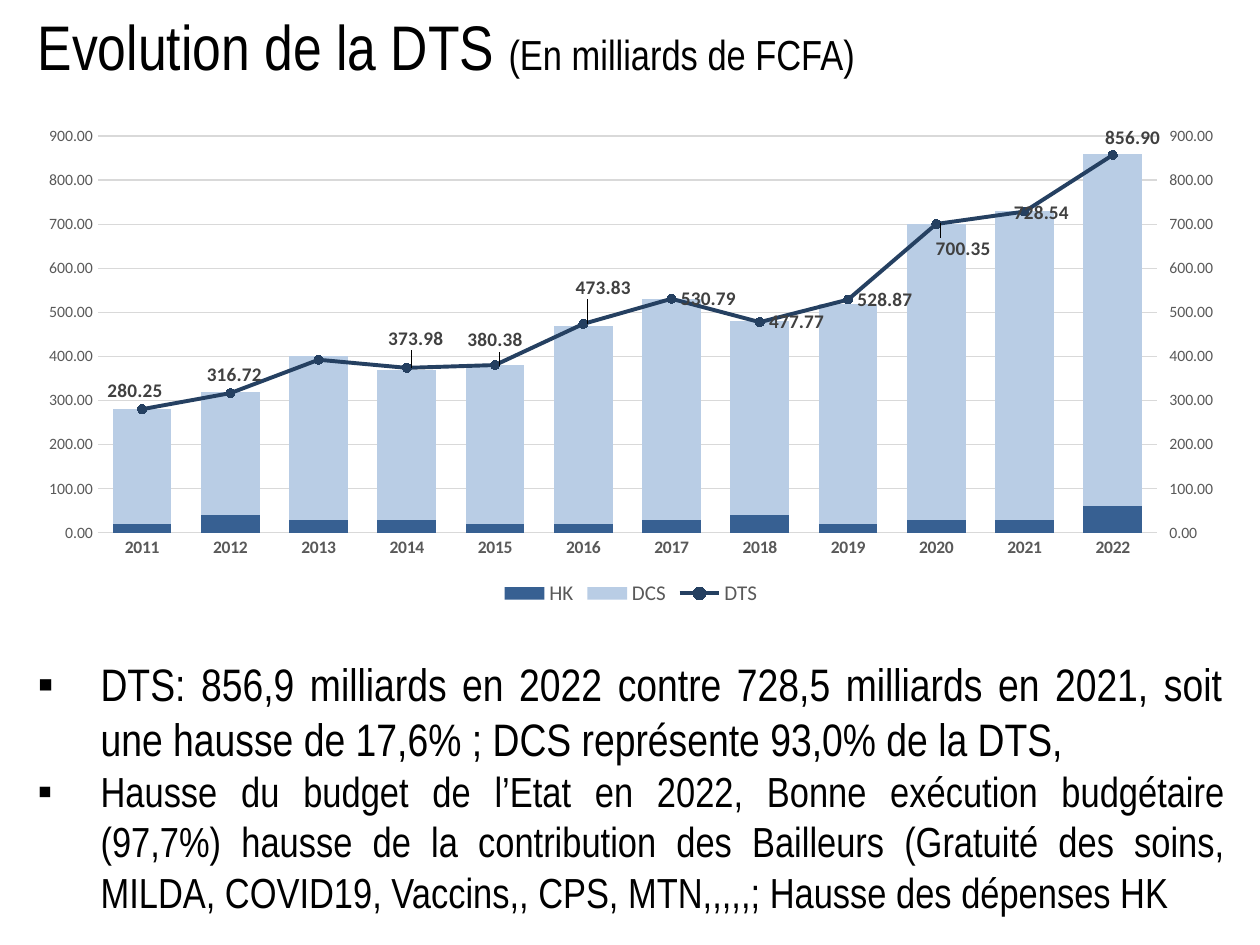
from copy import deepcopy

from lxml.etree import SubElement
from pptx import Presentation
from pptx.chart.data import CategoryChartData
from pptx.dml.color import RGBColor
from pptx.enum.chart import (XL_CHART_TYPE, XL_LABEL_POSITION, XL_LEGEND_POSITION,
                             XL_MARKER_STYLE, XL_TICK_MARK)
from pptx.enum.text import MSO_ANCHOR, MSO_AUTO_SIZE, PP_ALIGN
from pptx.oxml import parse_xml
from pptx.oxml.ns import nsdecls, qn
from pptx.util import Emu, Pt

COLORS = {"white": "FFFFFF", "black": "000000", "axis": "595959", "grid": "D9D9D9",
          "label": "404040", "HK": "376092", "DCS": "B9CDE5", "DTS": "254061"}
YEARS = [str(year) for year in range(2011, 2023)]
SERIES = {
    "HK": [20, 40, 30, 30, 20, 20, 30, 40, 20, 30, 30, 60],
    "DCS": [260, 280, 370, 340, 360, 450, 500, 440, 500, 670, 700, 800],
    "DTS": [280.25, 316.72, 392.55, 373.98, 380.38, 473.83,
            530.79, 477.77, 528.87, 700.35, 728.54, 856.90],
}
LABEL_SHIFTS = {0: (-44, -18), 1: (-33, -18), 3: (-28, -29), 4: (-37, -25),
                5: (-17, -36), 9: (-10, 25), 10: (-20, 1), 11: (-17, -17)}
UNLABELLED_POINT = 2
TITLE = [("Evolution de la DTS ", 36), ("(En milliards de FCFA)", 24)]
BULLETS = [
    ("DTS: 856,9 milliards en 2022 contre 728,5 milliards en 2021, soit une hausse "
     "de 17,6% ; DCS représente 93,0% de la DTS,", 26),
    ("Hausse du budget de l’Etat en 2022, Bonne exécution budgétaire (97,7%) hausse "
     "de la contribution des Bailleurs (Gratuité des soins, MILDA, COVID19, Vaccins,, "
     "CPS, MTN,,,,,; Hausse des dépenses HK", 24),
]


class SlideBuilder:
    """Hold the slide and its style, and add each kind of element."""

    scale = 914400 / 126
    text_font = "Arial Narrow"
    chart_font = "Calibri"

    def __init__(self, slide):
        self.slide = slide

    def px(self, length):
        return Emu(round(length * self.scale))

    def color(self, name):
        return RGBColor.from_string(COLORS[name])

    def style_font(self, font, size, color, name, bold=False):
        font.size, font.name, font.bold = Pt(size), name, bold
        font.color.rgb = self.color(color)

    def fill(self, fill, color):
        fill.solid()
        fill.fore_color.rgb = self.color(color)

    def place(self, shape, box):
        shape.left, shape.top, shape.width, shape.height = map(self.px, box)

    def add_title(self, parts, box):
        shape = self.slide.shapes.title
        self.place(shape, box)
        self.fill(shape.fill, "white")
        frame = shape.text_frame
        frame.auto_size = MSO_AUTO_SIZE.NONE
        frame.vertical_anchor = MSO_ANCHOR.BOTTOM
        frame.margin_bottom = self.px(13)
        paragraph = frame.paragraphs[0]
        paragraph.alignment = PP_ALIGN.LEFT
        for text, size in parts:
            run = paragraph.add_run()
            run.text = text
            self.style_font(run.font, size, "black", self.text_font)

    def add_bullets(self, items, box):
        shape = self.slide.placeholders[1]
        self.place(shape, box)
        frame = shape.text_frame
        frame.text = "\n".join(text for text, size in items)
        frame.auto_size = MSO_AUTO_SIZE.NONE
        for paragraph, (text, size) in zip(frame.paragraphs, items):
            paragraph.alignment = PP_ALIGN.JUSTIFY
            paragraph.space_before = Pt(0)
            self.style_font(paragraph.runs[0].font, size, "black", self.text_font)
            properties = paragraph._p.get_or_add_pPr()
            properties.set("marL", str(self.px(63)))
            properties.set("indent", str(self.px(-63)))
            SubElement(properties, qn("a:buFont")).set("typeface", "Arial")
            SubElement(properties, qn("a:buChar")).set("char", "▪")

    def add_chart(self, box, plot_box):
        data = CategoryChartData(number_format="0.00")
        data.categories = YEARS
        for name, values in SERIES.items():
            data.add_series(name, values)
        chart = self.slide.shapes.add_chart(
            XL_CHART_TYPE.COLUMN_STACKED, *map(self.px, box), data).chart
        self.style_font(chart.font, 10, "black", self.chart_font)
        chart.has_title = False
        chart.has_legend = True
        chart.legend.position = XL_LEGEND_POSITION.BOTTOM
        chart.legend.include_in_layout = False
        self.style_font(chart.legend.font, 12, "axis", self.chart_font)
        columns = chart.plots[0]
        columns.gap_width, columns.overlap = 50, 100
        columns.vary_by_categories = False
        for series in list(columns.series)[:2]:
            self.fill(series.format.fill, series.name)
        self.style_axes(chart)
        self.move_line_to_right_axis(chart)
        self.style_line(chart.plots[1].series[0], box)
        plot_area = chart._chartSpace.chart.plotArea
        self.drop(plot_area, "layout")
        left, top, width, height = plot_box
        plot_area.insert(0, self.layout(
            box, x=left - box[0], y=top - box[1], w=width, h=height))

    def style_axes(self, chart):
        category, value = chart.category_axis, chart.value_axis
        self.style_font(category.tick_labels.font, 10, "axis", self.chart_font, True)
        self.style_font(value.tick_labels.font, 9, "axis", self.chart_font)
        value.minimum_scale, value.maximum_scale, value.major_unit = 0, 900, 100
        value.tick_labels.number_format = "0.00"
        value.tick_labels.number_format_is_linked = False
        value.has_major_gridlines = True
        for axis in (category, value):
            axis.major_tick_mark = XL_TICK_MARK.NONE
        for line in (category.format.line, value.major_gridlines.format.line):
            line.color.rgb = self.color("grid")
            line.width = Pt(0.75)
        value.format.line.fill.background()

    def drop(self, parent, tag):
        for child in parent.findall(qn(f"c:{tag}")):
            parent.remove(child)

    def set_child(self, parent, tag, setting):
        for child in parent.findall(qn(f"c:{tag}")):
            child.set("val", setting)

    def move_line_to_right_axis(self, chart):
        plot_area = chart._chartSpace.chart.plotArea
        columns = plot_area.find(qn("c:barChart"))
        series = columns.findall(qn("c:ser"))[2]
        self.drop(series, "invertIfNegative")
        lines = parse_xml(
            f'<c:lineChart {nsdecls("c")}><c:grouping val="standard"/>'
            '<c:varyColors val="0"/><c:marker val="1"/>'
            '<c:axId val="501"/><c:axId val="502"/></c:lineChart>')
        lines.insert(2, series)
        columns.addnext(lines)
        category = plot_area.find(qn("c:catAx"))
        value = plot_area.find(qn("c:valAx"))
        right, hidden = deepcopy(value), deepcopy(category)
        value.addnext(right)
        right.addnext(hidden)
        self.drop(right, "majorGridlines")
        changes = [(right, {"axId": "502", "crossAx": "501", "axPos": "r",
                            "crosses": "max", "majorTickMark": "out"}),
                   (hidden, {"axId": "501", "crossAx": "502", "delete": "1"})]
        for axis, values in changes:
            for tag, setting in values.items():
                self.set_child(axis, tag, setting)

    def style_line(self, series, box):
        series.smooth = False
        series.format.line.color.rgb = self.color("DTS")
        series.format.line.width = Pt(2.25)
        series.marker.style, series.marker.size = XL_MARKER_STYLE.CIRCLE, 5
        self.fill(series.marker.format.fill, "DTS")
        series.marker.format.line.color.rgb = self.color("DTS")
        labels = series.data_labels
        labels.show_value = True
        labels.number_format, labels.number_format_is_linked = "0.00", False
        labels.position = XL_LABEL_POSITION.RIGHT
        self.style_font(labels.font, 11, "label", self.chart_font, True)
        for index in sorted([*LABEL_SHIFTS, UNLABELLED_POINT]):
            label = series.points[index].data_label
            self.style_font(label.font, 11, "label", self.chart_font, True)
            label.position = XL_LABEL_POSITION.RIGHT
            element = series._element.xpath(f"c:dLbls/c:dLbl[c:idx/@val='{index}']")[0]
            if index == UNLABELLED_POINT:
                self.set_child(element, "showVal", "0")
            else:
                x, y = LABEL_SHIFTS[index]
                element.insert(1, self.layout(box, x=x, y=y))

    def layout(self, box, **lengths):
        layout = parse_xml(f'<c:layout {nsdecls("c")}/>')
        manual = SubElement(layout, qn("c:manualLayout"))
        if "w" in lengths:
            for tag, setting in (("layoutTarget", "inner"), ("xMode", "edge"), ("yMode", "edge")):
                SubElement(manual, qn(f"c:{tag}")).set("val", setting)
        for tag, length in lengths.items():
            whole = box[2] if tag in "xw" else box[3]
            SubElement(manual, qn(f"c:{tag}")).set("val", f"{length / whole:.4f}")
        return layout


def main():
    presentation = Presentation()
    presentation.slide_width = Emu(round(1260 * SlideBuilder.scale))
    presentation.slide_height = Emu(round(945 * SlideBuilder.scale))
    builder = SlideBuilder(presentation.slides.add_slide(presentation.slide_layouts[1]))
    builder.add_title(TITLE, (25, 20, 1212, 76))
    builder.add_bullets(BULLETS, (25, 650, 1212, 276))
    builder.add_chart((25, 117, 1212, 494), (98, 136, 1059, 397))
    presentation.save("out.pptx")


if __name__ == "__main__":
    main()
